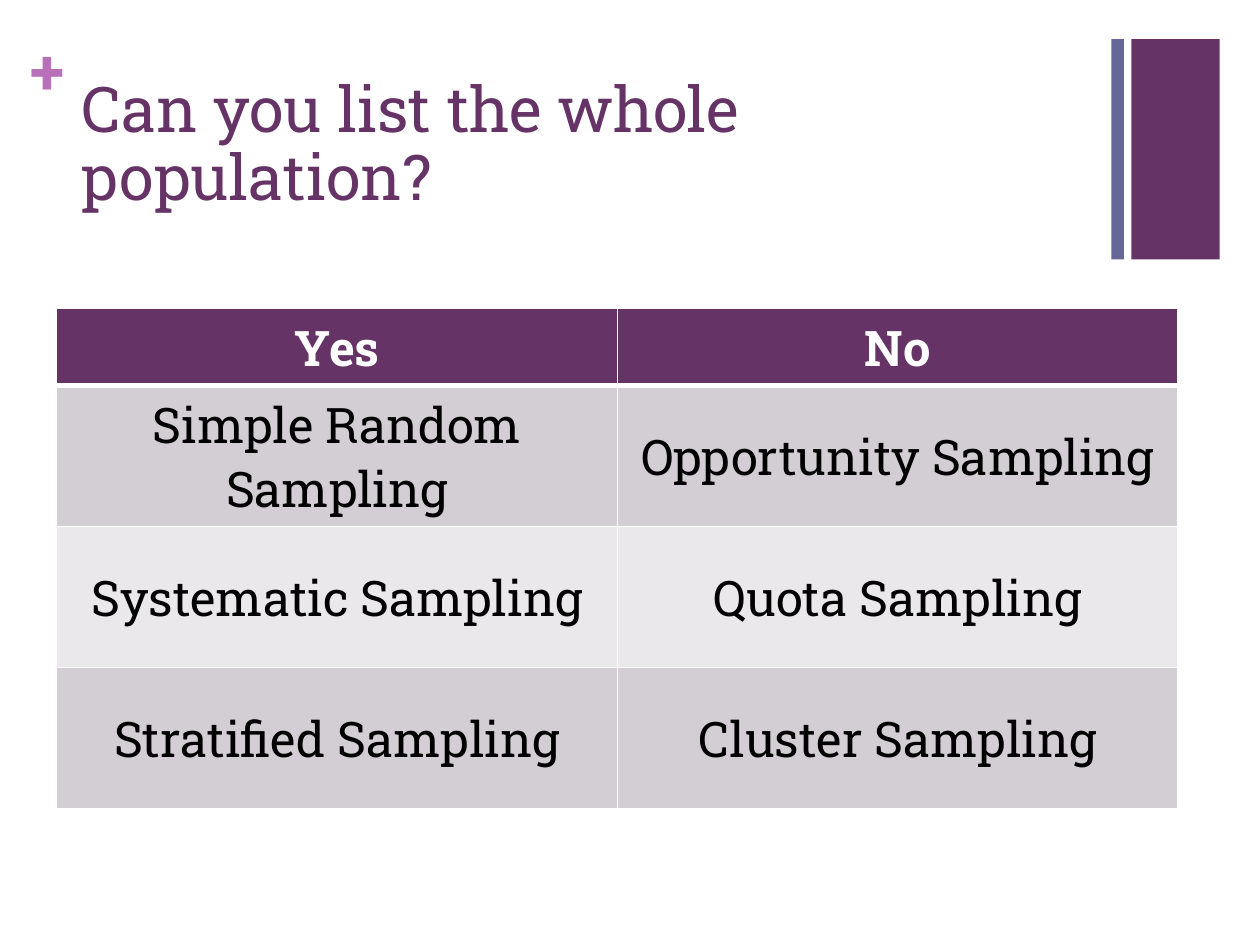
from lxml import etree
from pptx import Presentation
from pptx.dml.color import RGBColor
from pptx.enum.shapes import MSO_SHAPE
from pptx.enum.text import MSO_ANCHOR, MSO_AUTO_SIZE, PP_ALIGN
from pptx.oxml.ns import qn
from pptx.util import Inches, Pt

RECTANGLE = MSO_SHAPE.RECTANGLE
LEFT, CENTER = PP_ALIGN.LEFT, PP_ALIGN.CENTER
TOP, MIDDLE = MSO_ANCHOR.TOP, MSO_ANCHOR.MIDDLE
NO_AUTOFIT = MSO_AUTO_SIZE.NONE
TITLE_ONLY = 5

FONT = "Roboto Slab"
PURPLE, BLUE, PINK = "663366", "666699", "B870B8"
WHITE, BLACK = "FFFFFF", "000000"
BANDS = ("D3CED3", "EAE8EA")

ROWS = (
    ("Yes", "No"),
    ("Simple Random Sampling", "Opportunity Sampling"),
    ("Systematic Sampling", "Quota Sampling"),
    ("Stratified Sampling", "Cluster Sampling"),
)
COLUMN_WIDTH = 4.45
HEADER_HEIGHT, ROW_HEIGHT = 0.61, 1.12


def color(value):
    return RGBColor.from_string(value)


def add_run(paragraph, text, size, hex_color, bold=False):
    run = paragraph.add_run()
    run.text = text
    run.font.name = FONT
    run.font.size = Pt(size)
    run.font.bold = bold
    run.font.color.rgb = color(hex_color)


def add_bar(slide, left, width, hex_color):
    shape = slide.shapes.add_shape(
        RECTANGLE, Inches(left), Inches(0.31), Inches(width), Inches(1.75))
    shape.shadow.inherit = False
    shape.fill.solid()
    shape.fill.fore_color.rgb = color(hex_color)
    shape.line.fill.background()


def add_plus(slide):
    box = slide.shapes.add_textbox(
        Inches(0.24), Inches(0.25), Inches(0.29), Inches(0.61))
    frame = box.text_frame
    frame.margin_left = frame.margin_right = 0
    frame.margin_top = frame.margin_bottom = 0
    add_run(frame.paragraphs[0], "+", 36, PINK, bold=True)


def fill_title(slide, text):
    title = slide.shapes.title
    title.left, title.top = Inches(0.55), Inches(0.53)
    title.width, title.height = Inches(8.26), Inches(1.22)
    frame = title.text_frame
    frame.auto_size = NO_AUTOFIT
    frame.word_wrap = True
    frame.vertical_anchor = TOP
    frame.margin_top = Inches(0.09)
    paragraph = frame.paragraphs[0]
    paragraph.alignment = LEFT
    paragraph.line_spacing = 0.9
    add_run(paragraph, text, 36, PURPLE)


def set_border(cell, side, width):
    properties = cell._tc.get_or_add_tcPr()
    line = etree.SubElement(properties, qn(f"a:ln{side}"), w=str(Pt(width)))
    fill = etree.SubElement(line, qn("a:solidFill"))
    etree.SubElement(fill, qn("a:srgbClr"), val=WHITE)


def format_cell(cell, text, row):
    """Style one cell: a dark header row, then alternating bands."""
    header = row == 0
    widths = {"L": 1, "R": 1, "T": 3 if row == 1 else 1, "B": 3 if header else 1}
    for side, width in widths.items():
        set_border(cell, side, width)
    cell.fill.solid()
    cell.fill.fore_color.rgb = color(PURPLE if header else BANDS[(row - 1) % 2])
    cell.vertical_anchor = MIDDLE
    paragraph = cell.text_frame.paragraphs[0]
    paragraph.alignment = CENTER
    add_run(paragraph, text, 28, WHITE if header else BLACK, bold=header)


def add_sampling_table(slide):
    column_count = len(ROWS[0])
    height = HEADER_HEIGHT + ROW_HEIGHT * (len(ROWS) - 1)
    table = slide.shapes.add_table(
        len(ROWS), column_count, Inches(0.45), Inches(2.45),
        Inches(COLUMN_WIDTH * column_count), Inches(height)).table
    for row, texts in enumerate(ROWS):
        table.rows[row].height = Inches(ROW_HEIGHT if row else HEADER_HEIGHT)
        for column, text in enumerate(texts):
            format_cell(table.cell(row, column), text, row)


def main():
    presentation = Presentation()
    presentation.slide_width, presentation.slide_height = Inches(10), Inches(7.5)
    slide = presentation.slides.add_slide(presentation.slide_layouts[TITLE_ONLY])
    add_bar(slide, 8.98, 0.7, PURPLE)
    add_plus(slide)
    add_bar(slide, 8.82, 0.1, BLUE)
    fill_title(slide, "Can you list the whole population?")
    add_sampling_table(slide)
    presentation.save("out.pptx")


if __name__ == "__main__":
    main()
